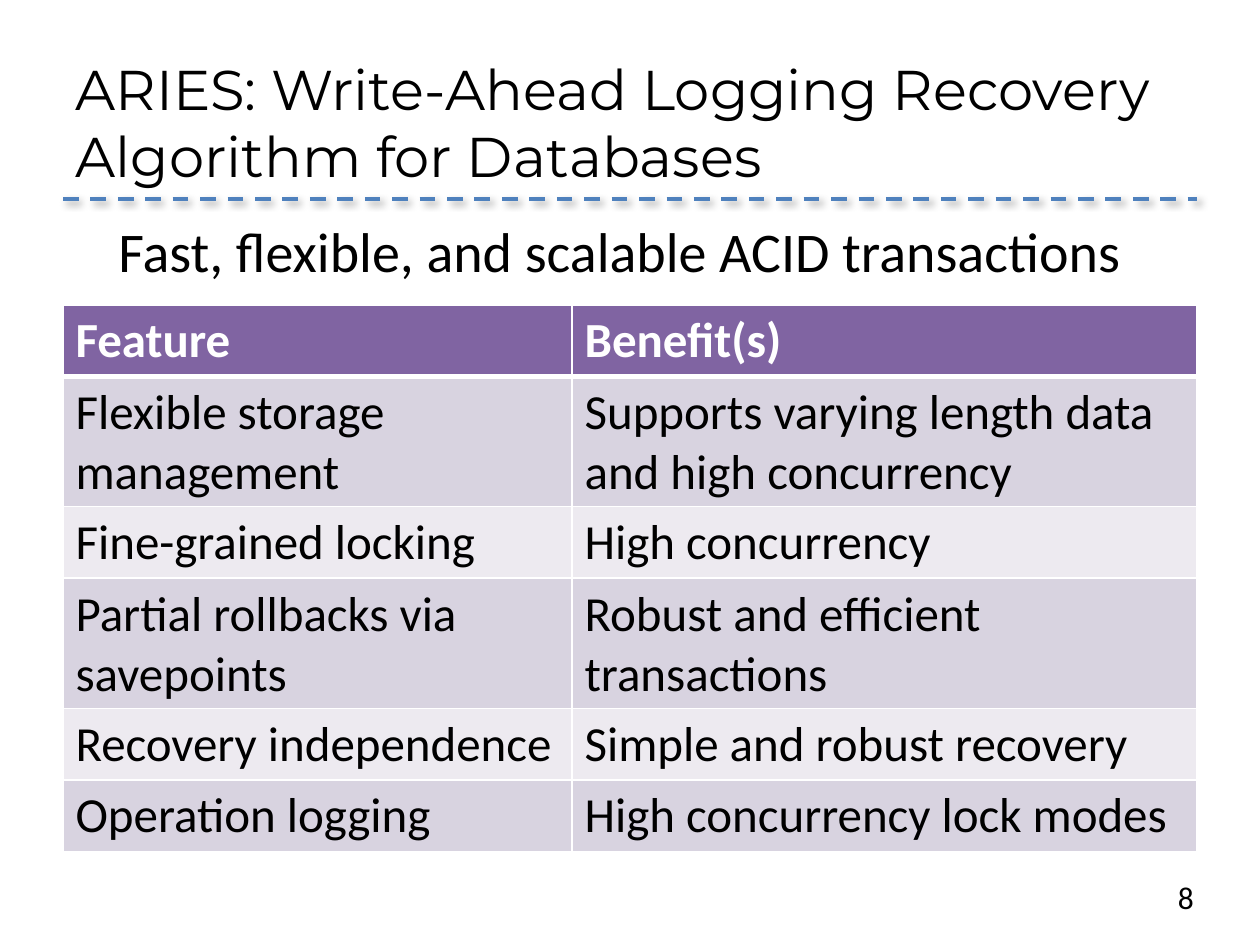
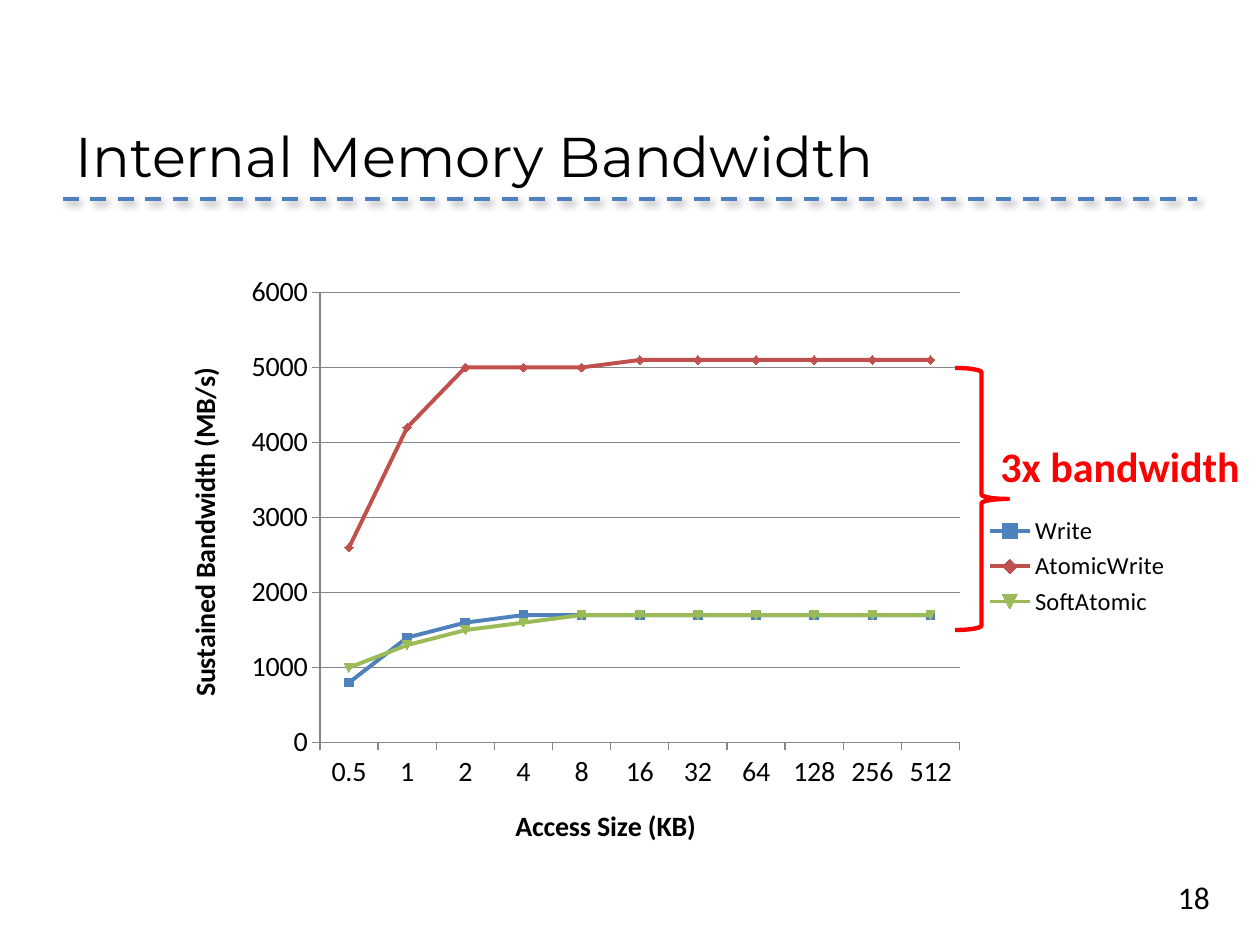
from dataclasses import dataclass
from lxml.etree import SubElement
from pptx import Presentation
from pptx.chart.data import CategoryChartData
from pptx.dml.color import RGBColor
from pptx.enum.chart import XL_CHART_TYPE, XL_LEGEND_POSITION, XL_TICK_MARK
from pptx.enum.dml import MSO_LINE
from pptx.enum.shapes import MSO_CONNECTOR, MSO_SHAPE
from pptx.enum.text import MSO_ANCHOR, MSO_AUTO_SIZE, PP_ALIGN
from pptx.oxml.ns import qn
from pptx.util import Emu, Pt

EMU_PER_PX = 9144


@dataclass(frozen=True)
class Theme:
    heading_font: str = "Montserrat"
    body_font: str = "Calibri"
    black: str = "000000"
    white: str = "FFFFFF"
    blue: str = "4F81BD"
    brick: str = "C0504D"
    green: str = "9BBB59"
    purple: str = "8064A2"
    dark_band: str = "D8D3E0"
    light_band: str = "EDEAF0"
    red: str = "FF0000"
    gray: str = "868686"
    title_size: int = 32
    table_size: int = 28
    callout_size: int = 24
    number_size: int = 18
    axis_size: int = 16
    legend_size: int = 14


@dataclass(frozen=True)
class Area:
    left: int
    top: int
    width: int
    height: int

    def emu(self) -> tuple:
        return tuple(px(side) for side in (self.left, self.top, self.width, self.height))


@dataclass(frozen=True)
class Bandwidth:
    name: str
    color: str
    values: tuple


THEME = Theme()
TITLE_AREA = Area(50, 30, 900, 125)
NUMBER_AREA = Area(925, 692, 50, 40)
RULE_Y = 158

FEATURES = (
    ("Feature", "Benefit(s)"),
    ("Flexible storage management", "Supports varying length data and high concurrency"),
    ("Fine-grained locking", "High concurrency"),
    ("Partial rollbacks via savepoints", "Robust and efficient transactions"),
    ("Recovery independence", "Simple and robust recovery"),
    ("Operation logging", "High concurrency lock modes"),
)
FEATURE_COLUMNS = (404, 496)
FEATURE_ROW_HEIGHT = 41

ACCESS_SIZES = ("0.5", "1", "2", "4", "8", "16", "32", "64", "128", "256", "512")
BANDWIDTHS = (
    Bandwidth("Write", THEME.blue, (800, 1400, 1600) + (1700,) * 8),
    Bandwidth("AtomicWrite", THEME.brick, (2600, 4200) + (5000,) * 3 + (5100,) * 6),
    Bandwidth("SoftAtomic", THEME.green, (1000, 1300, 1500, 1600) + (1700,) * 7),
)
PLOT_LAYOUT = {"x": 0.15, "y": 0.05, "w": 0.63, "h": 0.74}


def px(length: int) -> Emu:
    return Emu(length * EMU_PER_PX)


def rgb(color: str) -> RGBColor:
    return RGBColor.from_string(color)


def style_font(font, size: int, color: str = THEME.black, bold: bool = False,
               name: str = THEME.body_font) -> None:
    font.name = name
    font.size = Pt(size)
    font.bold = bold
    font.color.rgb = rgb(color)


def add_text(page, area: Area, text: str, size: int, color: str = THEME.black,
             bold: bool = False, align: PP_ALIGN = PP_ALIGN.LEFT) -> None:
    box = page.shapes.add_textbox(*area.emu())
    box.text_frame.word_wrap = True
    para = box.text_frame.paragraphs[0]
    para.text = text
    para.alignment = align
    style_font(para.runs[0].font, size, color, bold)


def add_rule(page) -> None:
    rule = page.shapes.add_connector(MSO_CONNECTOR.STRAIGHT, px(50), px(RULE_Y), px(950), px(RULE_Y))
    rule.line.color.rgb = rgb(THEME.blue)
    rule.line.width = Pt(2.25)
    rule.line.dash_style = MSO_LINE.DASH
    effects = SubElement(rule._element.spPr, qn("a:effectLst"))
    shadow = SubElement(effects, qn("a:outerShdw"), blurRad=str(Pt(4)), dist=str(Pt(3)),
                        dir="2700000", rotWithShape="0")
    color = SubElement(shadow, qn("a:srgbClr"), val=THEME.black)
    SubElement(color, qn("a:alpha"), val="40000")


def add_page(deck, title: str, number: int):
    page = deck.slides.add_slide(deck.slide_layouts[5])
    add_text(page, NUMBER_AREA, str(number), THEME.number_size)
    add_rule(page)
    box = page.shapes.title
    box.left, box.top, box.width, box.height = TITLE_AREA.emu()
    frame = box.text_frame
    frame.text = title
    frame.word_wrap = True
    frame.auto_size = MSO_AUTO_SIZE.NONE
    frame.vertical_anchor = MSO_ANCHOR.BOTTOM
    para = frame.paragraphs[0]
    para.alignment = PP_ALIGN.LEFT
    style_font(para.runs[0].font, THEME.title_size, name=THEME.heading_font)
    return page


def add_cell_borders(cell, bottom_width: int) -> None:
    properties = cell._tc.get_or_add_tcPr()
    widths = {"lnL": 1, "lnR": 1, "lnT": 1, "lnB": bottom_width}
    for tag, width in widths.items():
        line = SubElement(properties, qn(f"a:{tag}"), w=str(Pt(width)))
        fill = SubElement(line, qn("a:solidFill"))
        SubElement(fill, qn("a:srgbClr"), val=THEME.white)


def add_feature_table(page, left: int, top: int) -> None:
    area = Area(left, top, sum(FEATURE_COLUMNS), FEATURE_ROW_HEIGHT * len(FEATURES))
    table = page.shapes.add_table(len(FEATURES), len(FEATURE_COLUMNS), *area.emu()).table
    for column, width in zip(table.columns, FEATURE_COLUMNS):
        column.width = px(width)
    for row_index, texts in enumerate(FEATURES):
        header = row_index == 0
        band = THEME.dark_band if row_index % 2 else THEME.light_band
        for column_index, text in enumerate(texts):
            cell = table.cell(row_index, column_index)
            cell.text_frame.text = text
            style_font(cell.text_frame.paragraphs[0].runs[0].font, THEME.table_size,
                       THEME.white if header else THEME.black, header)
            add_cell_borders(cell, 3 if header else 1)
            cell.fill.solid()
            cell.fill.fore_color.rgb = rgb(THEME.purple if header else band)


def style_axis(axis, title: str) -> None:
    frame = axis.axis_title.text_frame
    frame.text = title
    style_font(frame.paragraphs[0].runs[0].font, THEME.axis_size, bold=True)
    style_font(axis.tick_labels.font, THEME.axis_size)
    axis.major_tick_mark = XL_TICK_MARK.OUTSIDE
    axis.minor_tick_mark = XL_TICK_MARK.NONE
    axis.format.line.color.rgb = rgb(THEME.gray)


def set_plot_layout(chart) -> None:
    plot_area = chart._chartSpace.chart.plotArea
    for old_layout in plot_area.findall(qn("c:layout")):
        plot_area.remove(old_layout)
    layout = SubElement(plot_area, qn("c:layout"))
    plot_area.insert(0, layout)
    manual = SubElement(layout, qn("c:manualLayout"))
    SubElement(manual, qn("c:layoutTarget"), val="inner")
    for side in ("x", "y"):
        SubElement(manual, qn(f"c:{side}Mode"), val="edge")
    for side, share in PLOT_LAYOUT.items():
        SubElement(manual, qn(f"c:{side}"), val=str(share))


def add_bandwidth_chart(page, area: Area) -> None:
    data = CategoryChartData()
    data.categories = ACCESS_SIZES
    for bandwidth in BANDWIDTHS:
        data.add_series(bandwidth.name, bandwidth.values)
    chart = page.shapes.add_chart(XL_CHART_TYPE.LINE_MARKERS, *area.emu(), data).chart
    style_font(chart.font, 10)
    chart.has_title = False
    chart.has_legend = True
    chart.legend.position = XL_LEGEND_POSITION.RIGHT
    chart.legend.include_in_layout = False
    style_font(chart.legend.font, THEME.legend_size)
    style_axis(chart.category_axis, "Access Size (KB)")
    style_axis(chart.value_axis, "Sustained Bandwidth (MB/s)")
    chart.value_axis.minimum_scale = 0
    chart.value_axis.maximum_scale = 6000
    chart.value_axis.major_unit = 1000
    chart.value_axis.major_gridlines.format.line.color.rgb = rgb(THEME.gray)
    chart.plots[0].vary_by_categories = False
    for series, bandwidth in zip(chart.plots[0].series, BANDWIDTHS):
        series.smooth = False
        series.format.line.color.rgb = rgb(bandwidth.color)
        series.format.line.width = Pt(2.25)
        series.marker.size = 5
        series.marker.format.fill.solid()
        series.marker.format.fill.fore_color.rgb = rgb(bandwidth.color)
        series.marker.format.line.color.rgb = rgb(bandwidth.color)
    set_plot_layout(chart)


def add_brace(page, area: Area) -> None:
    brace = page.shapes.add_shape(MSO_SHAPE.RIGHT_BRACE, *area.emu())
    brace.shadow.inherit = False
    brace.fill.background()
    brace.line.color.rgb = rgb(THEME.red)
    brace.line.width = Pt(2.5)


def build_features_page(deck) -> None:
    page = add_page(deck, "ARIES: Write-Ahead Logging Recovery Algorithm for Databases", 8)
    add_feature_table(page, 50, 242)
    add_text(page, Area(42, 167, 900, 70), "Fast, flexible, and scalable ACID transactions",
             THEME.title_size, align=PP_ALIGN.CENTER)


def build_bandwidth_page(deck) -> None:
    page = add_page(deck, "Internal Memory Bandwidth", 18)
    add_bandwidth_chart(page, Area(133, 208, 806, 483))
    add_text(page, Area(779, 345, 220, 50), "3x bandwidth", THEME.callout_size, THEME.red,
             True, PP_ALIGN.CENTER)
    add_brace(page, Area(758, 292, 42, 208))


def main() -> None:
    deck = Presentation()
    deck.slide_width, deck.slide_height = px(1000), px(750)
    build_features_page(deck)
    build_bandwidth_page(deck)
    deck.save("out.pptx")


if __name__ == "__main__":
    main()
